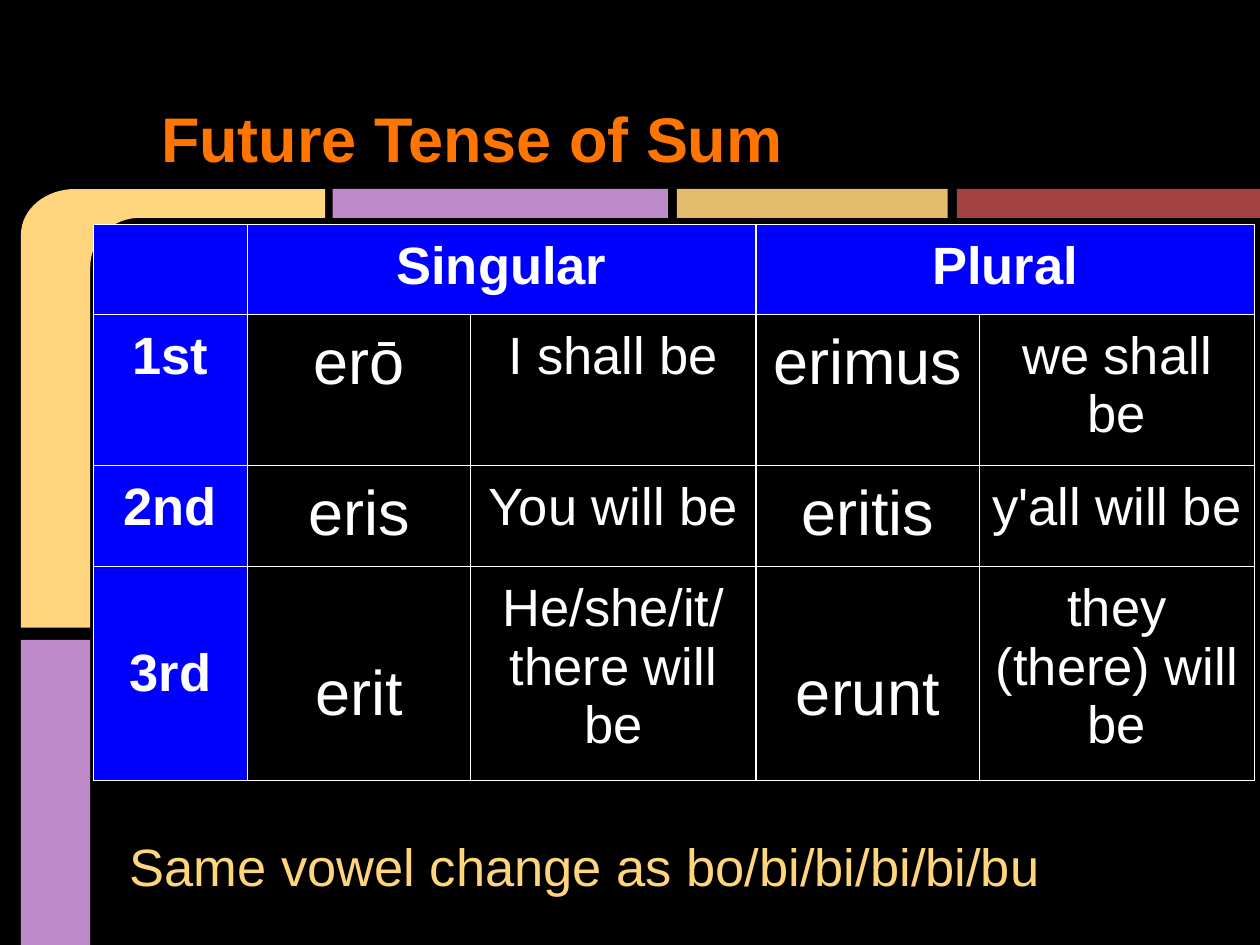
from dataclasses import dataclass
from math import cos, pi, sin

from lxml.etree import SubElement
from pptx import Presentation
from pptx.dml.color import RGBColor
from pptx.enum.shapes import MSO_SHAPE as Preset
from pptx.enum.text import MSO_ANCHOR as Anchor, PP_ALIGN as Align
from pptx.oxml.ns import qn
from pptx.util import Pt


@dataclass(frozen=True)
class Theme:
    font: str = "Arial"
    background: str = "000000"
    yellow: str = "FED47D"
    purple: str = "BF8AC9"
    gold: str = "E3BC6D"
    red: str = "A14141"
    orange: str = "FF7500"
    header: str = "0000FF"
    white: str = "FFFFFF"
    large: int = 36
    normal: int = 30
    inset: float = 7.2
    border: float = 0.75


def arc(center_x, center_y, radius_x, radius_y, start, end, steps=16):
    """Points along an elliptical arc, with angles in radians."""
    angles = [start + (end - start) * step / steps for step in range(steps + 1)]
    return [(center_x + radius_x * cos(a), center_y + radius_y * sin(a)) for a in angles]


class SlideBuilder:
    def __init__(self, slide, theme):
        self.slide = slide
        self.theme = theme
        fill = slide.background.fill
        fill.solid()
        fill.fore_color.rgb = RGBColor.from_string(theme.background)

    def paint(self, shape, color):
        shape.shadow.inherit = False
        shape.fill.solid()
        shape.fill.fore_color.rgb = RGBColor.from_string(color)
        shape.line.fill.background()

    def bar(self, left, top, width, height, color):
        shape = self.slide.shapes.add_shape(
            Preset.RECTANGLE, Pt(left), Pt(top), Pt(width), Pt(height))
        self.paint(shape, color)

    def outline(self, points, color):
        start, *rest = [(Pt(x), Pt(y)) for x, y in points]
        builder = self.slide.shapes.build_freeform(*start)
        builder.add_line_segments(rest, close=True)
        self.paint(builder.convert_to_shape(), color)

    def run(self, paragraph, text, size, color, bold=False):
        run = paragraph.add_run()
        run.text = text
        run.font.name = self.theme.font
        run.font.size = Pt(size)
        run.font.bold = bold
        run.font.color.rgb = RGBColor.from_string(color)

    def inset(self, holder):
        """Give a text frame or a cell the same margin on every side."""
        for side in ("left", "top", "right", "bottom"):
            setattr(holder, f"margin_{side}", Pt(self.theme.inset))

    def text(self, box, text, size, color, bold=False, anchor=Anchor.TOP,
             margin=0, indent=0, before=0):
        frame = self.slide.shapes.add_textbox(*map(Pt, box)).text_frame
        frame.word_wrap = True
        frame.vertical_anchor = anchor
        self.inset(frame)
        paragraph = frame.paragraphs[0]
        paragraph.space_before = Pt(before)
        properties = paragraph._p.get_or_add_pPr()
        properties.set("marL", str(Pt(margin)))
        properties.set("indent", str(Pt(indent)))
        self.run(paragraph, text, size, color, bold)

    def borders(self, cell):
        properties = cell._tc.get_or_add_tcPr()
        for side in ("lnL", "lnR", "lnT", "lnB"):
            line = SubElement(properties, qn(f"a:{side}"), w=str(Pt(self.theme.border)))
            fill = SubElement(line, qn("a:solidFill"))
            SubElement(fill, qn("a:srgbClr"), val=self.theme.white)

    def cell(self, cell, text, size, header):
        self.inset(cell)
        self.borders(cell)
        if header:
            cell.fill.solid()
            cell.fill.fore_color.rgb = RGBColor.from_string(self.theme.header)
        else:
            cell.fill.background()
        if text:
            paragraph = cell.text_frame.paragraphs[0]
            paragraph.alignment = Align.CENTER
            self.run(paragraph, text, size, self.theme.white, bold=header)

    def table(self, left, top, widths, heights, rows):
        table = self.slide.shapes.add_table(
            len(rows), len(widths), Pt(left), Pt(top),
            Pt(sum(widths)), Pt(sum(heights))).table
        table.first_row = table.horz_banding = False
        for column, width in zip(table.columns, widths):
            column.width = Pt(width)
        for row, height in zip(table.rows, heights):
            row.height = Pt(height)
        for r, row in enumerate(rows):
            for c, text in enumerate(row):
                header = r == 0 or c == 0
                latin = not header and c % 2 == 1
                size = self.theme.large if latin else self.theme.normal
                self.cell(table.cell(r, c), text, size, header)
        return table


def main():
    presentation = Presentation()
    presentation.slide_width, presentation.slide_height = Pt(720), Pt(540)
    theme = Theme()
    slide = presentation.slides.add_slide(presentation.slide_layouts[6])
    builder = SlideBuilder(slide, theme)

    left, inner_left, top, inner_top = 12, 51.6, 108, 124.5
    corner_end, corner_bottom = 185.8, 358.6
    builder.outline(
        [(inner_left, corner_bottom), (left, corner_bottom)]
        + arc(left + 31, top + 26, 31, 26, pi, 1.5 * pi)
        + [(corner_end, top), (corner_end, inner_top)]
        + arc(inner_left + 28, inner_top + 28, 28, 28, 1.5 * pi, pi),
        theme.yellow)
    builder.bar(left, 365.6, inner_left - left, 174.4, theme.purple)
    for start, end, color in ((190, 381.6, theme.purple),
                              (386.8, 541.6, theme.gold),
                              (546.8, 720, theme.red)):
        builder.bar(start, top, end - start, inner_top - top, color)

    builder.text((67, 469.4, 616.3, 52.6), "Same vowel change as bo/bi/bi/bi/bi/bu",
                 theme.normal, theme.yellow, margin=36, indent=-36, before=6)
    builder.text((67, 17.3, 616.3, 90), "Future Tense of Sum", theme.large,
                 theme.orange, bold=True, anchor=Anchor.BOTTOM, indent=18)

    table = builder.table(
        53.4, 128.2, (87.8, 127.8, 163, 127.8, 157), (51.4, 81.2, 54.8, 114.8),
        [("", "Singular", "", "Plural", ""),
         ("1st", "erō", "I shall be", "erimus", "we shall be"),
         ("2nd", "eris", "You will be", "eritis", "y'all will be"),
         ("3rd", "erit", "He/she/it/ there will be", "erunt", "they (there) will be")])
    for column in (1, 3):
        table.cell(0, column).merge(table.cell(0, column + 1))
        table.cell(3, column).margin_top = Pt(30)
    for column in (0, 1, 3):
        table.cell(3, column).vertical_anchor = Anchor.MIDDLE

    presentation.save("out.pptx")


if __name__ == "__main__":
    main()
